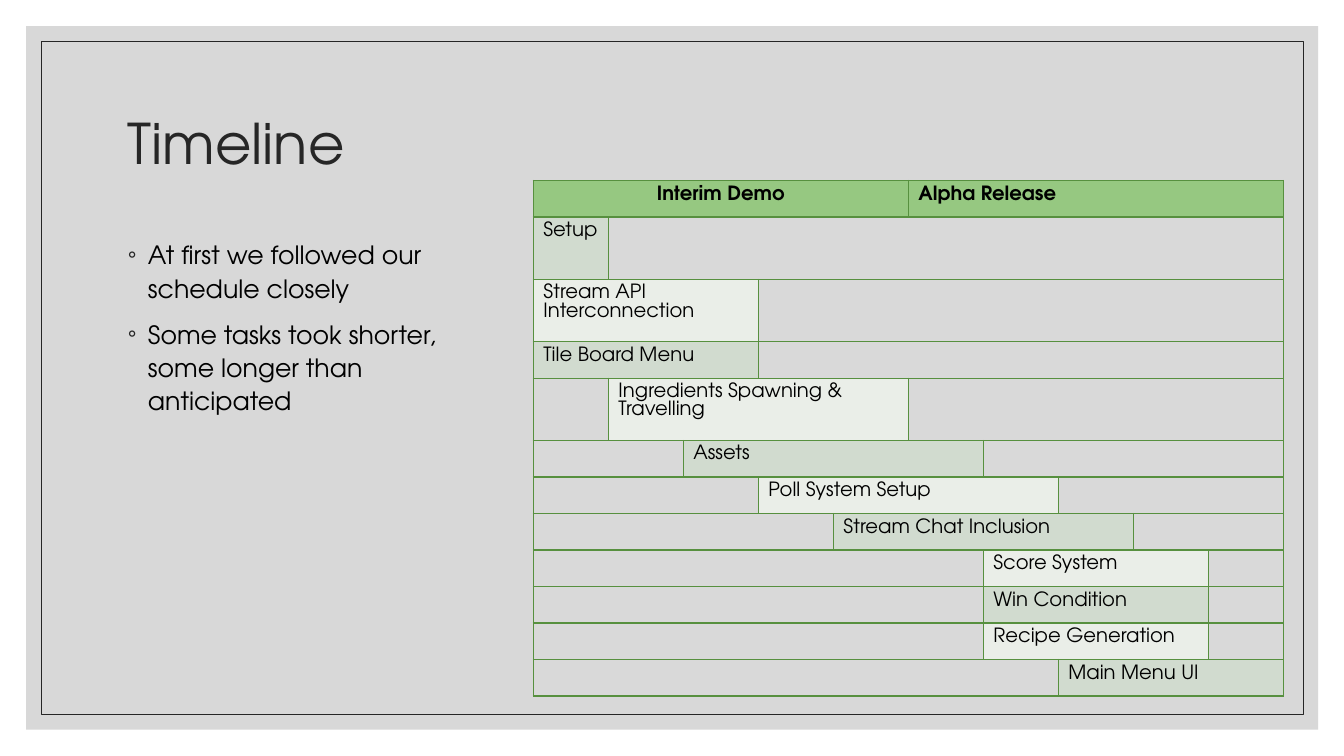
from lxml.etree import SubElement as Sub
from pptx import Presentation
from pptx.dml.color import RGBColor
from pptx.enum.shapes import MSO_SHAPE as Shape
from pptx.enum.text import MSO_ANCHOR as Anchor, PP_ALIGN as Align
from pptx.oxml.ns import qn
from pptx.util import Cm, Pt

INK, BLACK, GREY, RULE = "262626", "000000", "D9D9D9", "57903F"
HEAD, BANDS = "96C881", ("EAEEE8", "D1DBCF")
TALL, LOW, COL, COLS = 1.57, 0.92, 1.89, 10
TASKS = [
    (0, 1, "Setup", TALL),
    (0, 3, "Stream API Interconnection", TALL),
    (0, 3, "Tile Board Menu", LOW),
    (1, 4, "Ingredients Spawning & Travelling", TALL),
    (2, 4, "Assets", LOW),
    (3, 4, "Poll System Setup", LOW),
    (4, 4, "Stream Chat Inclusion", LOW),
    (6, 3, "Score System", LOW),
    (6, 3, "Win Condition", LOW),
    (6, 3, "Recipe Generation", LOW),
    (7, 3, "Main Menu UI", LOW),
]
POINTS = [
    "At first we followed our schedule closely",
    "Some tasks took shorter, some longer than anticipated",
]


def tint(code):
    return RGBColor.from_string(code)


class Deck:
    """Holds the font and the current slide, and draws each kind of element."""

    def __init__(self, font):
        self.font = font
        self.show = Presentation()
        self.show.slide_width, self.show.slide_height = Cm(33.87), Cm(19.05)
        self.slide = self.show.slides.add_slide(self.show.slide_layouts[6])

    def rect(self, box, fill=None, alpha=100, line=None):
        shape = self.slide.shapes.add_shape(Shape.RECTANGLE, *map(Cm, box))
        shape.shadow.inherit = False
        if fill:
            shape.fill.solid()
            shape.fill.fore_color.rgb = tint(fill)
            code = shape.fill._xPr.find(".//" + qn("a:srgbClr"))
            Sub(code, qn("a:alpha"), val=str(alpha * 1000))
        else:
            shape.fill.background()
        if line:
            shape.line.color.rgb = tint(line)
            shape.line.width = Pt(0.5)
        else:
            shape.line.fill.background()

    def run(self, para, text, size, color=BLACK, bold=False):
        run = para.add_run()
        run.text = text
        font = run.font
        font.name, font.size, font.bold = self.font, Pt(size), bold
        font.color.rgb = tint(color)

    def text(self, box, lines, size, color, space, anchor=Anchor.TOP, mark=None):
        frame = self.slide.shapes.add_textbox(*map(Cm, box)).text_frame
        frame.word_wrap = True
        frame.vertical_anchor = anchor
        for num, line in enumerate(lines):
            para = frame.add_paragraph() if num else frame.paragraphs[0]
            para.line_spacing = space
            if mark:
                para.space_before = Pt(9)
                self.bullet(para, mark)
            self.run(para, line, size, color)

    def bullet(self, para, mark):
        props = para._p.get_or_add_pPr()
        props.set("marL", str(Cm(0.51)))
        props.set("indent", str(-Cm(0.51)))
        Sub(Sub(props, qn("a:buClr")), qn("a:srgbClr"), val=INK)
        Sub(props, qn("a:buSzPct"), val="70000")
        Sub(props, qn("a:buFont"), typeface=self.font)
        Sub(props, qn("a:buChar"), char=mark)

    def table(self, left, top, rows):
        size = [Cm(n) for n in (left, top, COL * COLS, sum(rows))]
        grid = self.slide.shapes.add_table(len(rows), COLS, *size).table
        for col in grid.columns:
            col.width = Cm(COL)
        for row, high in zip(grid.rows, rows):
            row.height = Cm(high)
        for cell in grid.iter_cells():
            self.edge(cell)
        return grid

    def edge(self, cell):
        props = cell._tc.get_or_add_tcPr()
        for side in "LRTB":
            line = Sub(props, qn("a:ln" + side), w=str(Pt(1)))
            Sub(Sub(line, qn("a:solidFill")), qn("a:srgbClr"), val=RULE)

    def cell(self, grid, row, start, span, fill, text="", bold=False, align=Align.LEFT):
        if not span:
            return
        cell = grid.cell(row, start)
        if span > 1:
            cell.merge(grid.cell(row, start + span - 1))
        cell.fill.solid()
        cell.fill.fore_color.rgb = tint(fill)
        para = cell.text_frame.paragraphs[0]
        para.alignment = align
        if text:
            self.run(para, text, 14, bold=bold)
        else:
            Sub(para._p, qn("a:endParaRPr"), sz="1400")


def main():
    deck = Deck("TeX Gyre Adventor")
    deck.rect((0.66, 0.66, 32.56, 17.73), fill="BFBFBF", alpha=60)
    deck.rect((1.04, 1.04, 31.8, 16.97), line=INK)
    deck.text((2.97, 1.78, 27.94, 3.81), ["Timeline"], 40, INK, 0.9, Anchor.MIDDLE)
    deck.text((2.97, 5.84, 9.78, 10.41), POINTS, 18, BLACK, 1.1, mark="◦")

    grid = deck.table(13.44, 4.55, [LOW] + [task[3] for task in TASKS])
    half = COLS // 2
    deck.cell(grid, 0, 0, half, HEAD, "Interim Demo", True, Align.CENTER)
    deck.cell(grid, 0, half, half, HEAD, "Alpha Release", True)
    for row, (start, span, name, _) in enumerate(TASKS, 1):
        end = start + span
        deck.cell(grid, row, 0, start, GREY)
        deck.cell(grid, row, start, span, BANDS[row % 2], name)
        deck.cell(grid, row, end, COLS - end, GREY)
    deck.show.save("out.pptx")


if __name__ == "__main__":
    main()
